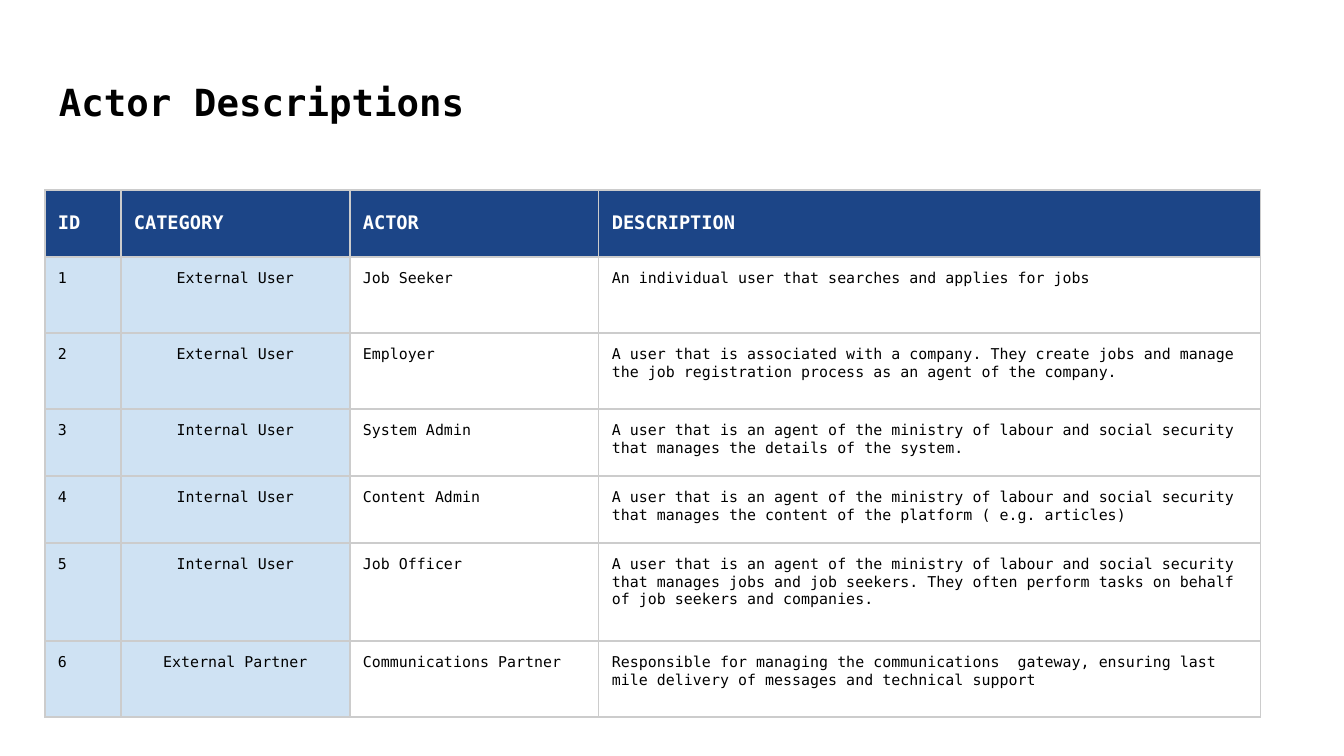
from lxml.etree import SubElement
from pptx import Presentation
from pptx.dml.color import RGBColor
from pptx.enum.text import MSO_ANCHOR as ANCHOR, PP_ALIGN as ALIGN
from pptx.oxml.ns import qn
from pptx.util import Emu, Pt

FONT = "DejaVu Sans Mono"
BLACK = RGBColor(0x00, 0x00, 0x00)
WHITE = RGBColor(0xFF, 0xFF, 0xFF)
NAVY = RGBColor(0x1C, 0x45, 0x87)
PALE_BLUE = RGBColor(0xCF, 0xE2, 0xF3)
GREY = RGBColor(0xCC, 0xCC, 0xCC)

INSET = 13
COLUMN_WIDTHS = [76, 229, 249, 662]
ROW_HEIGHTS = [67, 76, 76, 67, 67, 98, 76]
HEADERS = ["ID", "CATEGORY", "ACTOR", "DESCRIPTION"]
AGENT = "A user that is an agent of the ministry of labour and social security that manages "
ACTORS = [
    ("External User", "Job Seeker",
     "An individual user that searches and applies for jobs"),
    ("External User", "Employer",
     "A user that is associated with a company. They create jobs and manage "
     "the job registration process as an agent of the company."),
    ("Internal User", "System Admin", AGENT + "the details of the system."),
    ("Internal User", "Content Admin",
     AGENT + "the content of the platform ( e.g. articles)"),
    ("Internal User", "Job Officer",
     AGENT + "jobs and job seekers. They often perform tasks on behalf "
     "of job seekers and companies."),
    ("External Partner", "Communications Partner",
     "Responsible for managing the communications  gateway, ensuring last "
     "mile delivery of messages and technical support"),
]


def px(n):
    return Emu(round(n * 914400 / 134.4))


def set_insets(box):
    box.margin_left = box.margin_right = px(INSET)
    box.margin_top = box.margin_bottom = px(INSET)


def add_text(tf, text, size, color, bold=False, align=ALIGN.LEFT):
    tf.word_wrap = True
    p = tf.paragraphs[0]
    p.alignment = align
    r = p.add_run()
    r.text = text
    r.font.name = FONT
    r.font.size = Pt(size)
    r.font.bold = bold
    r.font.color.rgb = color


def add_title(s, text):
    tf = s.shapes.add_textbox(px(46), px(66), px(1253), px(85)).text_frame
    set_insets(tf)
    add_text(tf, text, 20, BLACK, bold=True)


def set_borders(cell):
    tc_pr = cell._tc.get_or_add_tcPr()
    for i, side in enumerate(("lnL", "lnR", "lnT", "lnB")):
        ln = tc_pr.makeelement(qn(f"a:{side}"), {"w": str(Pt(0.75))})
        fill = SubElement(ln, qn("a:solidFill"))
        SubElement(fill, qn("a:srgbClr"), val=str(GREY))
        tc_pr.insert(i, ln)


def fill_cell(cell, text, row, col):
    header = row == 0
    set_insets(cell)
    cell.vertical_anchor = ANCHOR.MIDDLE if header else ANCHOR.TOP
    cell.fill.solid()
    if header:
        cell.fill.fore_color.rgb = NAVY
        add_text(cell.text_frame, text, 10, WHITE, bold=True)
    else:
        cell.fill.fore_color.rgb = PALE_BLUE if col < 2 else WHITE
        align = ALIGN.CENTER if col == 1 else ALIGN.LEFT
        add_text(cell.text_frame, text, 8, BLACK, align=align)
    set_borders(cell)


def add_actor_table(s):
    rows = [HEADERS] + [(str(n), *actor) for n, actor in enumerate(ACTORS, 1)]
    table = s.shapes.add_table(
        len(rows), len(HEADERS), px(45), px(190),
        px(sum(COLUMN_WIDTHS)), px(sum(ROW_HEIGHTS))).table
    for column, width in zip(table.columns, COLUMN_WIDTHS):
        column.width = px(width)
    for i, (values, height) in enumerate(zip(rows, ROW_HEIGHTS)):
        table.rows[i].height = px(height)
        for j, text in enumerate(values):
            fill_cell(table.cell(i, j), text, i, j)


def main():
    prs = Presentation()
    prs.slide_width, prs.slide_height = px(1344), px(756)
    s = prs.slides.add_slide(prs.slide_layouts[6])
    add_title(s, "Actor Descriptions")
    add_actor_table(s)
    prs.save("out.pptx")


if __name__ == "__main__":
    main()
